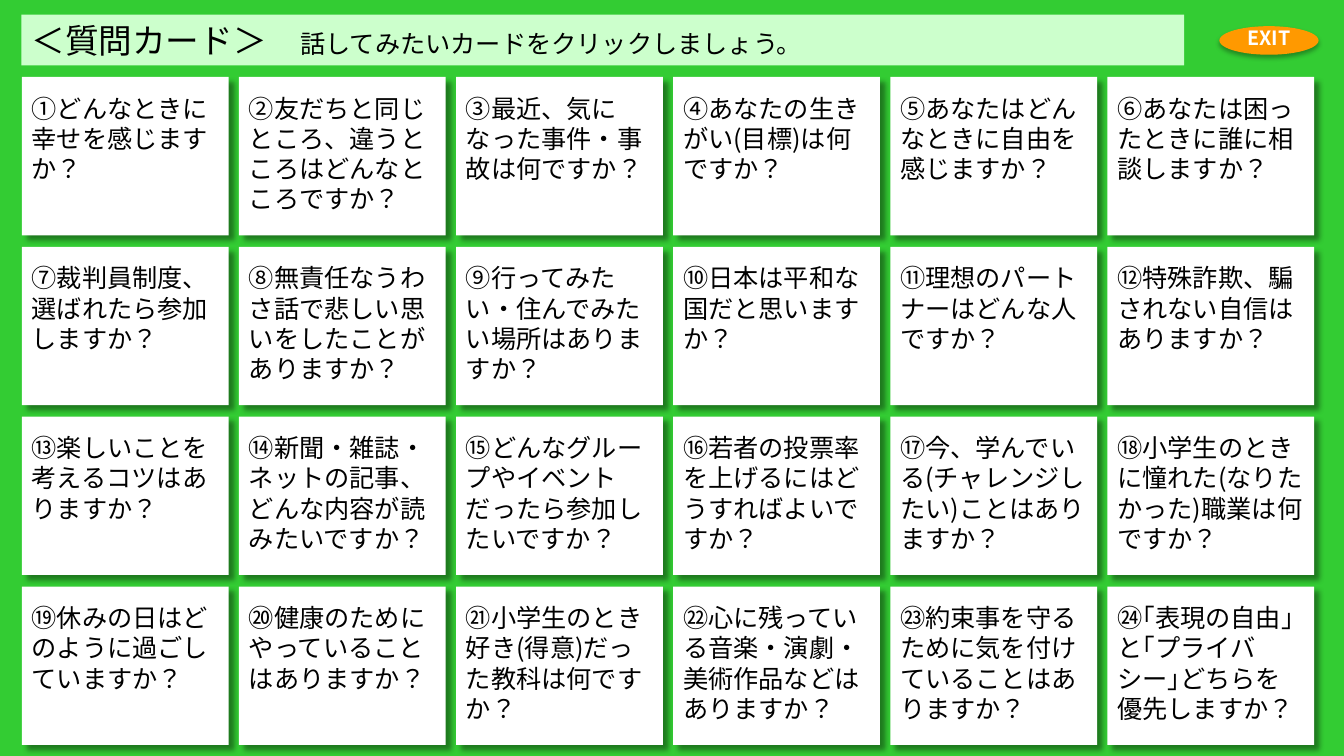
from lxml import etree
from pptx import Presentation
from pptx.dml.color import RGBColor
from pptx.enum import lang, shapes, text
from pptx.oxml.ns import qn
from pptx.util import Cm, Pt

FONT = "Noto Sans CJK JP"
COLS = 6
QUESTIONS = [
    "①どんなときに幸せを感じますか？",
    "②友だちと同じところ、違うところはどんなところですか？",
    "③最近、気になった事件・事故は何ですか？",
    "④あなたの生きがい(目標)は何ですか？",
    "⑤あなたはどんなときに自由を感じますか？",
    "⑥あなたは困ったときに誰に相談しますか？",
    "⑦裁判員制度、\n選ばれたら参加しますか？",
    "⑧無責任なうわさ話で悲しい思いをしたことがありますか？",
    "⑨行ってみたい・住んでみたい場所はありますか？",
    "⑩日本は平和な国だと思いますか？",
    "⑪理想のパートナーはどんな人ですか？",
    "⑫特殊詐欺、騙されない自信はありますか？",
    "⑬楽しいことを考えるコツはありますか？",
    "⑭新聞・雑誌・ネットの記事、どんな内容が読みたいですか？",
    "⑮どんなグループやイベントだったら参加したいですか？",
    "⑯若者の投票率を上げるにはどうすればよいですか？",
    "⑰今、学んでいる(チャレンジしたい)ことはありますか？",
    "⑱小学生のときに憧れた(なりたかった)職業は何ですか？",
    "⑲休みの日はどのように過ごしていますか？",
    "⑳健康のためにやっていることはありますか？",
    "㉑小学生のとき好き(得意)だった教科は何ですか？",
    "㉒心に残っている音楽・演劇・\n美術作品などはありますか？",
    "㉓約束事を守るために気を付けていることはありますか？",
    "㉔｢表現の自由｣と｢プライバシー｣どちらを優先しますか？",
]


def rgb(value):
    return RGBColor.from_string(value)


def paint(fill, color):
    fill.solid()
    fill.fore_color.rgb = rgb(color)


def style_run(r, size, color="000000", bold=False):
    r.font.size, r.font.bold, r.font.name = Pt(size), bold, FONT
    r.font.color.rgb = rgb(color)
    r.font.language_id = lang.MSO_LANGUAGE_ID.JAPANESE
    etree.SubElement(r._r.get_or_add_rPr(), qn("a:ea"), typeface=FONT)


def add_shadow(sp, alpha, blur, dist, angle):
    sp.shadow.inherit = False
    effects = sp._element.spPr.find(qn("a:effectLst"))
    shadow = etree.SubElement(
        effects, qn("a:outerShdw"), blurRad=str(Pt(blur)), dist=str(Pt(dist)),
        dir=str(angle * 60000), algn="ctr", rotWithShape="0")
    color = etree.SubElement(shadow, qn("a:srgbClr"), val="000000")
    etree.SubElement(color, qn("a:alpha"), val=str(alpha * 1000))


def add_panel(s, kind, box, color):
    sp = s.shapes.add_shape(kind, *box)
    paint(sp.fill, color)
    sp.line.fill.background()
    return sp


def add_title(s, box):
    title = s.shapes.title
    title.left, title.top, title.width, title.height = box
    paint(title.fill, "CCFFCC")
    tf = title.text_frame
    tf.text = "＜質問カード＞　"
    tf.word_wrap = True
    tf.auto_size = text.MSO_AUTO_SIZE.NONE
    tf.vertical_anchor = text.MSO_ANCHOR.TOP
    p = tf.paragraphs[0]
    p.alignment = text.PP_ALIGN.LEFT
    p.add_run().text = "話してみたいカードをクリックしましょう。"
    for r, size in zip(p.runs, (24, 18)):
        style_run(r, size)


def add_exit_button(s, box):
    sp = add_panel(s, shapes.MSO_SHAPE.OVAL, box, "FF9900")
    add_shadow(sp, 32, 3.5, 2.2, 90)
    tf = sp.text_frame
    tf.text = "EXIT"
    tf.vertical_anchor = text.MSO_ANCHOR.MIDDLE
    p = tf.paragraphs[0]
    p.alignment = text.PP_ALIGN.CENTER
    p.line_spacing = Pt(13)
    style_run(p.runs[0], 14, "FFFFFF", True)


def add_card(s, box, question):
    sp = add_panel(s, shapes.MSO_SHAPE.RECTANGLE, box, "FFFFFF")
    add_shadow(sp, 40, 4, 5, 45)
    tf = sp.text_frame
    tf.text = question
    tf.word_wrap = True
    tf.margin_top = Cm(0.4)
    tf.vertical_anchor = text.MSO_ANCHOR.TOP
    for p in tf.paragraphs:
        p.alignment = text.PP_ALIGN.LEFT
        style_run(p.runs[0], 18)


def add_card_grid(s, box, gap_x, gap_y):
    left, top, width, height = box
    rows = len(QUESTIONS) // COLS
    card_w = (width - gap_x * (COLS - 1)) // COLS
    card_h = (height - gap_y * (rows - 1)) // rows
    for i, question in enumerate(QUESTIONS):
        row, col = divmod(i, COLS)
        x = left + col * (card_w + gap_x)
        y = top + row * (card_h + gap_y)
        add_card(s, (x, y, card_w, card_h), question)


def main():
    prs = Presentation()
    prs.slide_width, prs.slide_height = Cm(33.87), Cm(19.05)
    s = prs.slides.add_slide(prs.slide_layouts[5])
    paint(s.background.fill, "33CC33")

    # Header
    add_title(s, (Cm(0.54), Cm(0.37), Cm(29.3), Cm(1.28)))
    add_exit_button(s, (Cm(30.73), Cm(0.66), Cm(2.5), Cm(0.72)))

    # Question cards
    add_card_grid(s, (Cm(0.55), Cm(1.94), Cm(32.57), Cm(16.83)), Cm(0.26), Cm(0.29))
    prs.save("out.pptx")


if __name__ == "__main__":
    main()
